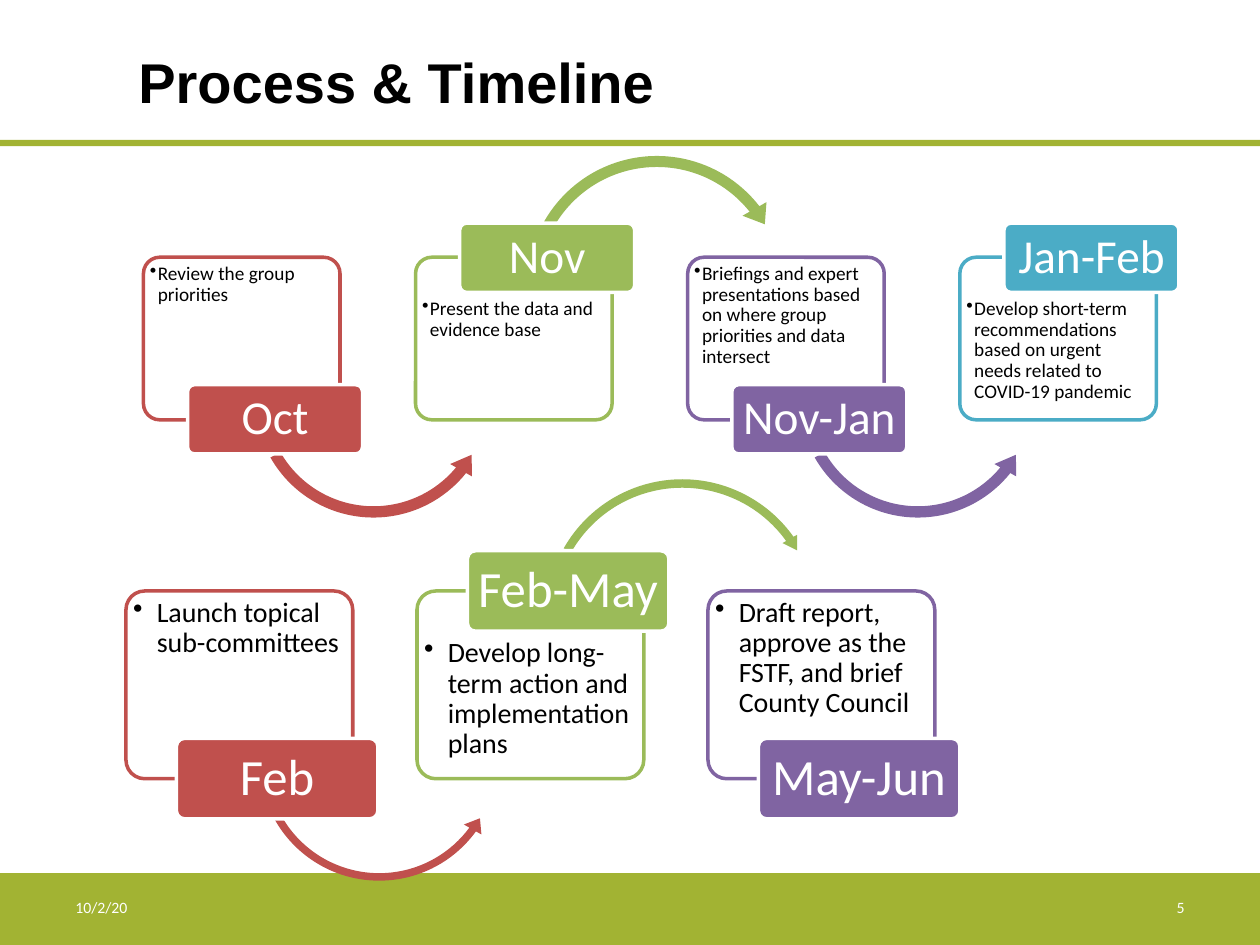
from dataclasses import dataclass
from lxml import etree
from pptx import Presentation
from pptx.dml.color import RGBColor
from pptx.enum.shapes import MSO_SHAPE
from pptx.enum.text import MSO_ANCHOR, PP_ALIGN
from pptx.oxml.ns import qn
from pptx.util import Pt

RECT = MSO_SHAPE.RECTANGLE
ROUND = MSO_SHAPE.ROUNDED_RECTANGLE
OVER = MSO_SHAPE.CIRCULAR_ARROW
UNDER = MSO_SHAPE.LEFT_CIRCULAR_ARROW
TOP, MID = MSO_ANCHOR.TOP, MSO_ANCHOR.MIDDLE
LEFT, CENTER, RIGHT = PP_ALIGN.LEFT, PP_ALIGN.CENTER, PP_ALIGN.RIGHT

WHITE, BLACK, OLIVE = "FFFFFF", "000000", "A2B333"
RED, GREEN, PURPLE, TEAL = "C0504D", "9BBB59", "8064A2", "4BACC6"


@dataclass
class Step:
    month: str
    task: str
    tint: str


@dataclass
class Arc:
    kind: MSO_SHAPE
    dx: float
    dy: float
    size: float
    bends: tuple


@dataclass
class Row:
    left: float
    top: float
    pitch: float
    card: tuple
    chip: tuple
    chip_dx: float
    low_dy: float
    high_dy: float
    low_arc: Arc
    high_arc: Arc
    pad: float
    hang: float
    task_pt: float
    month_pt: float
    first_high: bool
    steps: list


ROWS = [
    Row(82, 147, 155.5, (112.3, 92.9), (100, 39.6), 25.2, 72.8, -19.5,
        Arc(UNDER, 59.8, 9.4, 143.3, (0.045, 5.7, 23.46, 90.25, 0.05)),
        Arc(OVER, 59, -62.6, 157.7, (0.04, 5.13, 193.11, 125.76, 0.05)),
        21, 4.5, 11, 27, False, [
            Step("Oct", "Review the group priorities", RED),
            Step("Nov", "Present the data and evidence base", GREEN),
            Step("Nov-Jan", "Briefings and expert presentations based on "
                 "where group priorities and data intersect", PURPLE),
            Step("Jan-Feb", "Develop short-term recommendations based on "
                 "urgent needs related to COVID-19 pandemic", TEAL)]),
    Row(72, 337.7, 166.3, (129.6, 107.3), (115.2, 46), 28.8, 84.2, -23,
        Arc(UNDER, 72.7, 25.2, 144, (0.03, 3.97, 21.73, 90.25, 0.04)),
        Arc(OVER, 71.3, -66.2, 160.6, (0.03, 3.53, 194.71, 125.76, 0.03)),
        24.2, 13.5, 16, 29, False, [
            Step("Feb", "Launch topical sub-committees", RED),
            Step("Feb-May", "Develop long-term action and "
                 "implementation plans", GREEN),
            Step("May-Jun", "Draft report, approve as the FSTF, and brief "
                 "County Council", PURPLE)]),
]


def paint(part, tint: str) -> None:
    if hasattr(part, "solid"):
        part.solid()
        part = part.fore_color
    else:
        part = part.color
    part.rgb = RGBColor.from_string(tint)


def draw(slide, kind, x, y, w, h, fill: str, line: str = "", bends=()):
    shape = slide.shapes.add_shape(kind, Pt(x), Pt(y), Pt(w), Pt(h))
    shape.shadow.inherit = False
    paint(shape.fill, fill)
    if line:
        paint(shape.line, line)
        shape.line.width = Pt(2)
    else:
        shape.line.fill.background()
    for i, bend in enumerate(bends):
        shape.adjustments[i] = bend
    return shape


def write(shape, text: str, size: float, tint: str, align=LEFT, anchor=MID,
          pads=(7.2, 3.6, 7.2, 3.6), face="Calibri", bold=False, wrap=True):
    frame = shape.text_frame
    frame.word_wrap = wrap
    frame.vertical_anchor = anchor
    frame.margin_left, frame.margin_top, frame.margin_right, \
        frame.margin_bottom = map(Pt, pads)
    para = frame.paragraphs[0]
    para.alignment = align
    run = para.add_run()
    run.text = text
    font = run.font
    font.size, font.name, font.bold = Pt(size), face, bold
    paint(font, tint)
    return para


def label(slide, x, y, w, h, text: str, size: float, tint: str, **style):
    box = slide.shapes.add_textbox(Pt(x), Pt(y), Pt(w), Pt(h))
    write(box, text, size, tint, **style)


def bullet(para, hang: float) -> None:
    props = para._p.get_or_add_pPr()
    props.set("marL", str(Pt(hang)))
    props.set("indent", str(-Pt(hang)))
    etree.SubElement(props, qn("a:buChar")).set("char", "•")


def fade(shape, share: int) -> None:
    tone = shape.fill._xPr.find(qn("a:solidFill"))[0]
    etree.SubElement(tone, qn("a:alpha")).set("val", str(share * 1000))


def flow(slide, row: Row) -> None:
    for i, step in enumerate(row.steps):
        x = row.left + i * row.pitch
        high = (i % 2 == 1) != row.first_high
        card = draw(slide, ROUND, x, row.top, *row.card, WHITE, step.tint,
                    (0.1,))
        fade(card, 90)
        para = write(card, step.task, row.task_pt, BLACK, anchor=TOP,
                     pads=(1, row.pad if high else 1, 1, 1))
        bullet(para, row.hang)
        para.line_spacing = 0.9
        if i < len(row.steps) - 1:
            arc = row.high_arc if high else row.low_arc
            draw(slide, arc.kind, x + arc.dx, row.top + arc.dy, arc.size,
                 arc.size, step.tint, bends=arc.bends)
        dy = row.high_dy if high else row.low_dy
        chip = draw(slide, ROUND, x + row.chip_dx, row.top + dy, *row.chip,
                    step.tint, WHITE, (0.1,))
        para = write(chip, step.month, row.month_pt, WHITE, CENTER,
                     pads=(4, 2.7, 4, 2.7), wrap=False)
        para.line_spacing = 0.9


def main() -> None:
    deck = Presentation()
    deck.slide_width, deck.slide_height = Pt(720), Pt(540)
    slide = deck.slides.add_slide(deck.slide_layouts[6])
    draw(slide, RECT, 0, 499, 720, 41, OLIVE)
    draw(slide, RECT, 0, 79.9, 720, 3.6, OLIVE)
    label(slide, 72, 14.4, 576, 63.4, "Process & Timeline", 32, BLACK,
          face="Arial", bold=True)
    label(slide, 36, 504, 168, 28.8, "10/2/20", 9, WHITE)
    label(slide, 516, 504, 168, 28.8, "5", 9, WHITE, align=RIGHT)
    for row in ROWS:
        flow(slide, row)
    deck.save("out.pptx")


if __name__ == "__main__":
    main()
